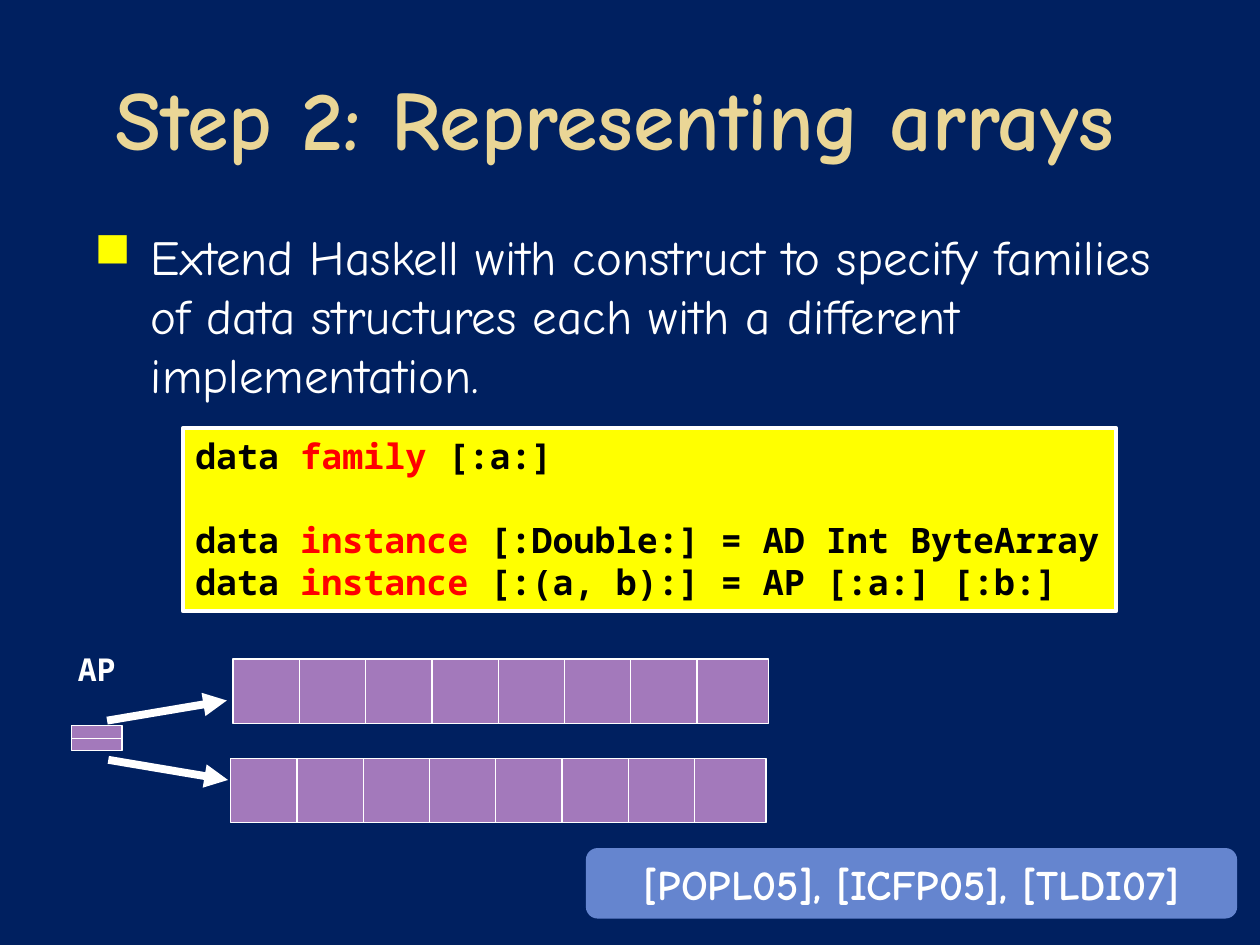
"""Build the slide about representing arrays with data families."""
from lxml.etree import SubElement
from pptx import Presentation
from pptx.dml.color import RGBColor
from pptx.enum.shapes import MSO_CONNECTOR, MSO_SHAPE
from pptx.enum.text import MSO_ANCHOR, PP_ALIGN
from pptx.oxml.ns import qn
from pptx.util import Pt

NAVY = RGBColor(0x00, 0x20, 0x60)
GOLD = RGBColor(0xEA, 0xD6, 0x96)
WHITE = RGBColor(0xFF, 0xFF, 0xFF)
BLACK = RGBColor(0x00, 0x00, 0x00)
YELLOW = RGBColor(0xFF, 0xFF, 0x00)
RED = RGBColor(0xFF, 0x00, 0x00)
BLUE = RGBColor(0x65, 0x85, 0xCF)
PURPLE = RGBColor(0xA3, 0x79, 0xBB)
HAND, MONO = "Comic Neue", "Noto Sans Mono"

TITLE = "Step 2: Representing arrays "
BODY = ("Extend Haskell with construct to specify families of data structures "
        "each with a different implementation.")
CODE = [
    (0, "data ", "family", " [:a:]"),
    (24, "data ", "instance", " [:Double:] = AD Int ByteArray"),
    (0, "data ", "instance", " [:(a, b):] = AP [:a:] [:b:]"),
]
CITATIONS = "[POPL05], [ICFP05], [TLDI07]"
CONSTRUCTOR = "AP"
ARRAYS = [(133.2, 376.6), (131.8, 433.4)]
ARRAY_WIDTH, ARRAY_HEIGHT = 306, 36.7
CELLS, CELL_WIDTH = 8, 37.87
PAIR = (41, 414.7, 28.8, 14.4)
ARROWS = [(61.2, 411.8, 129.6, 400.3), (61.9, 434.2, 130.3, 445.7)]


def add_run(paragraph, text, font, size, color, bold=True):
    run = paragraph.add_run()
    run.text = text
    run.font.name = font
    run.font.size = Pt(size)
    run.font.bold = bold
    run.font.color.rgb = color


def add_box(shapes, kind, bounds, fill, line_width=0):
    shape = shapes.add_shape(kind, *map(Pt, bounds))
    shape.shadow.inherit = False
    shape.fill.solid()
    shape.fill.fore_color.rgb = fill
    if line_width:
        shape.line.color.rgb = WHITE
        shape.line.width = Pt(line_width)
    else:
        shape.line.fill.background()
    return shape


def add_line(shapes, points, width=0.75, arrow=False):
    connector = shapes.add_connector(MSO_CONNECTOR.STRAIGHT, *map(Pt, points))
    connector.line.color.rgb = WHITE
    connector.line.width = Pt(width)
    if arrow:
        SubElement(connector.line._get_or_add_ln(), qn("a:tailEnd"), type="triangle")
    SubElement(connector._element.spPr, qn("a:effectLst"))


def add_text(slide, bounds, wrap=True):
    frame = slide.shapes.add_textbox(*map(Pt, bounds)).text_frame
    frame.word_wrap = wrap
    return frame.paragraphs[0]


def add_title(slide):
    title = slide.shapes.title
    title.left, title.top, title.width, title.height = map(Pt, (36, 21.6, 648, 90))
    title.text_frame.vertical_anchor = MSO_ANCHOR.MIDDLE
    paragraph = title.text_frame.paragraphs[0]
    paragraph.alignment = PP_ALIGN.CENTER
    add_run(paragraph, TITLE, HAND, 48, GOLD)


def add_body(slide):
    paragraph = add_text(slide, (36, 126, 648, 370.8))
    paragraph.space_before = Pt(18)
    properties = paragraph._p.get_or_add_pPr()
    properties.set("marL", str(Pt(43.2)))
    properties.set("indent", str(Pt(-32.4)))
    bullet_color = SubElement(properties, qn("a:buClr"))
    SubElement(bullet_color, qn("a:srgbClr"), val=str(YELLOW))
    SubElement(properties, qn("a:buChar"), char="■")
    add_run(paragraph, BODY, HAND, 28, WHITE, bold=False)


def add_code(slide):
    box = add_box(slide.shapes, MSO_SHAPE.RECTANGLE, (104.4, 244.8, 533.5, 104.4), YELLOW, 2.25)
    frame = box.text_frame
    frame.word_wrap = True
    frame.vertical_anchor = MSO_ANCHOR.TOP
    for index, (gap, *parts) in enumerate(CODE):
        paragraph = frame.add_paragraph() if index else frame.paragraphs[0]
        paragraph.alignment = PP_ALIGN.LEFT
        paragraph.space_before = Pt(gap)
        for text, color in zip(parts, (BLACK, RED, BLACK)):
            add_run(paragraph, text, MONO, 20, color)


def add_citations(slide):
    box = add_box(slide.shapes, MSO_SHAPE.ROUNDED_RECTANGLE, (334.8, 484.6, 372.2, 40.3), BLUE)
    box.text_frame.vertical_anchor = MSO_ANCHOR.MIDDLE
    paragraph = box.text_frame.paragraphs[0]
    paragraph.alignment = PP_ALIGN.CENTER
    add_run(paragraph, CITATIONS, HAND, 24, WHITE)


def add_diagram(slide):
    left, top, width, height = PAIR
    pair = slide.shapes.add_group_shape().shapes
    add_box(pair, MSO_SHAPE.RECTANGLE, PAIR, PURPLE, 0.75)
    add_line(pair, (left, top + height / 2, left + width, top + height / 2))
    for left, top in ARRAYS:
        array = slide.shapes.add_group_shape().shapes
        bounds = (left, top, ARRAY_WIDTH, ARRAY_HEIGHT)
        add_box(array, MSO_SHAPE.RECTANGLE, bounds, PURPLE, 0.75)
        for cell in range(1, CELLS):
            x = left + cell * CELL_WIDTH
            add_line(array, (x, top, x, top + ARRAY_HEIGHT))
    for arrow in ARROWS:
        add_line(slide.shapes, arrow, 4.5, arrow=True)
    label = add_text(slide, (37.4, 367.9, 36, 28.8), wrap=False)
    add_run(label, CONSTRUCTOR, MONO, 18, WHITE)


def main():
    presentation = Presentation()
    presentation.slide_width, presentation.slide_height = Pt(720), Pt(540)
    slide = presentation.slides.add_slide(presentation.slide_layouts[5])
    slide.background.fill.solid()
    slide.background.fill.fore_color.rgb = NAVY
    add_title(slide)
    add_body(slide)
    add_code(slide)
    add_citations(slide)
    add_diagram(slide)
    presentation.save("out.pptx")


if __name__ == "__main__":
    main()
